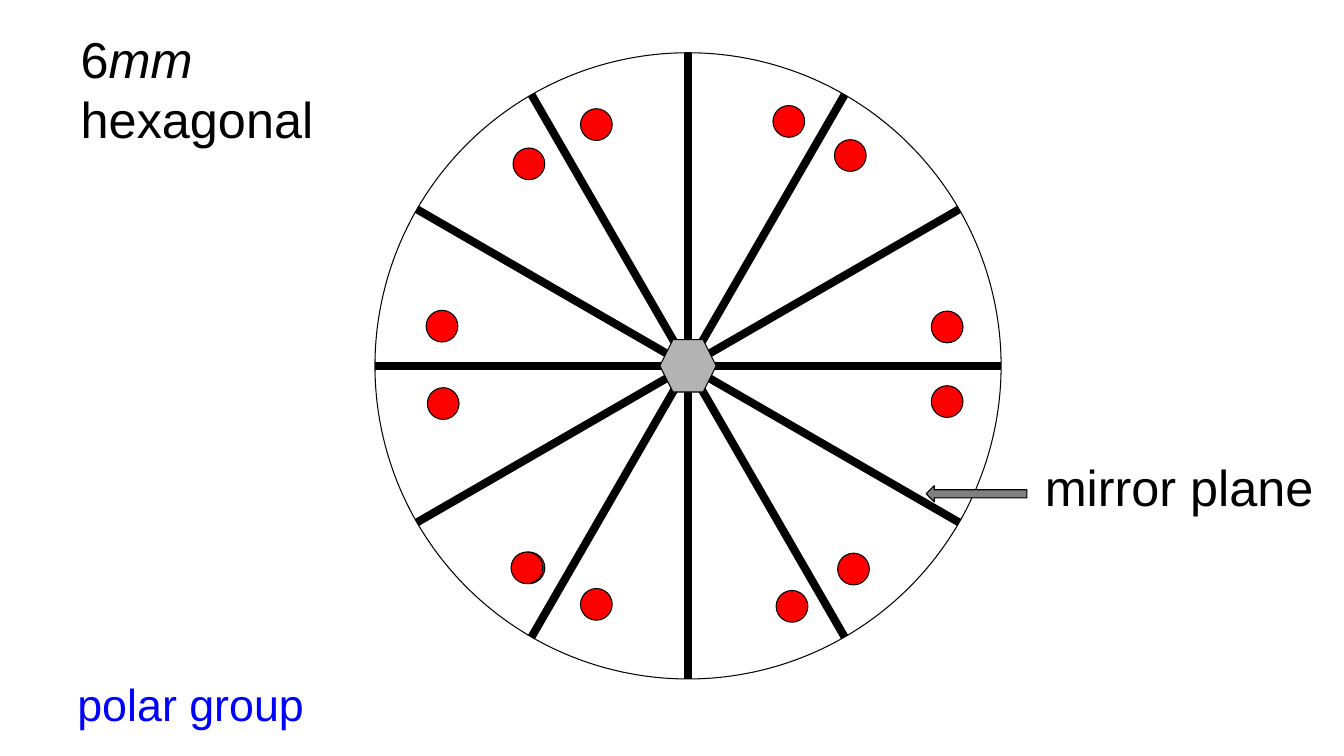
import math
from dataclasses import dataclass

import pptx
import pptx.util
import pptx.dml.color
import pptx.enum.shapes
import pptx.enum.text
import lxml.etree

Cm, Pt = pptx.util.Cm, pptx.util.Pt
RGB = pptx.dml.color.RGBColor.from_string
Shape = pptx.enum.shapes.MSO_SHAPE


@dataclass(frozen=True)
class Theme:
    font: str = "Arial"
    ink: str = "000000"
    note: str = "0000FF"
    dot: str = "FF0000"
    axis: str = "B3B3B3"
    arrow: str = "808080"
    large: int = 36
    small: int = 32
    thin: float = 0.75
    thick: float = 5.75


THEME = Theme()

# Centres of the general positions, in cm from the middle of the circle
POINTS = [
    (-4.01, 5.09), (6.53, -0.98), (-4.01, -5.09), (-2.31, -6.08),
    (6.53, 0.9), (-2.31, 6.01), (4.17, 5.12), (2.62, 6.06),
    (4.09, -5.3), (2.54, -6.16), (-6.17, 0.95), (-6.2, -1),
    (-4.06, 5.09),
]


def draw(slide, kind, box, fill=None):
    """Add a thinly outlined preset shape; box is in cm."""
    shape = slide.shapes.add_shape(kind, *map(Cm, box))
    shape.shadow.inherit = False
    if fill:
        shape.fill.solid()
        shape.fill.fore_color.rgb = RGB(fill)
    else:
        shape.fill.background()
    shape.line.color.rgb = RGB(THEME.ink)
    shape.line.width = Pt(THEME.thin)


def around(x, y, wide, high):
    """Return the box of the given size centred on x, y."""
    return x - wide / 2, y - high / 2, wide, high


def style(frame, size, color):
    frame.word_wrap = True
    frame.auto_size = pptx.enum.text.MSO_AUTO_SIZE.NONE
    frame.vertical_anchor = pptx.enum.text.MSO_ANCHOR.TOP
    for para in frame.paragraphs:
        para.alignment = pptx.enum.text.PP_ALIGN.LEFT
        for run in para.runs:
            run.font.name = THEME.font
            run.font.size = Pt(size)
            run.font.color.rgb = RGB(color)


def head(slide, box):
    title = slide.shapes.title
    title.left, title.top, title.width, title.height = map(Cm, box)
    frame = title.text_frame
    frame.text = "6\nhexagonal"
    group = frame.paragraphs[0].add_run()
    group.text = "mm"
    group.font.italic = True
    style(frame, THEME.large, THEME.ink)


def label(slide, box, text, size, color):
    frame = slide.shapes.add_textbox(*map(Cm, box)).text_frame
    frame.text = text
    style(frame, size, color)


def mirror(slide, x, y, radius, angle):
    """Draw one mirror plane as a diameter at the given angle."""
    dx = radius * math.cos(angle)
    dy = radius * math.sin(angle)
    line = slide.shapes.add_connector(
        pptx.enum.shapes.MSO_CONNECTOR.STRAIGHT,
        Cm(x - dx), Cm(y - dy), Cm(x + dx), Cm(y + dy))
    line.line.color.rgb = RGB(THEME.ink)
    line.line.width = Pt(THEME.thick)
    lxml.etree.SubElement(
        line._element.spPr, pptx.oxml.ns.qn("a:effectLst"))


def stereogram(slide, box):
    left, top, size = box
    radius = size / 2
    x, y = left + radius, top + radius
    for step in range(6):
        mirror(slide, x, y, radius, math.radians(30 * step))
    draw(slide, Shape.OVAL, (left, top, size, size))
    for dx, dy in POINTS:
        draw(slide, Shape.OVAL, around(x + dx, y + dy, 0.8, 0.8), THEME.dot)
    draw(slide, Shape.HEXAGON, around(x, y, 1.42, 1.32), THEME.axis)


def callout(slide, box):
    """Point an arrow left from the mirror plane label."""
    left, top, wide, high = box
    draw(slide, Shape.LEFT_ARROW, (left, top + 0.86, 2.54, 0.41), THEME.arrow)
    label(slide, (left + 2.74, top, wide - 2.74, high), "mirror plane",
          THEME.large, THEME.ink)


def main():
    deck = pptx.Presentation()
    deck.slide_width, deck.slide_height = Cm(33.87), Cm(19.05)
    slide = deck.slides.add_slide(deck.slide_layouts[5])
    head(slide, (1.78, 0.58, 6.6, 3.33))
    stereogram(slide, (9.45, 1.33, 15.78))
    callout(slide, (23.34, 11.38, 10.3, 1.8))
    label(slide, (1.7, 16.92, 6.6, 1.63), "polar group",
          THEME.small, THEME.note)
    deck.save("out.pptx")


if __name__ == "__main__":
    main()
